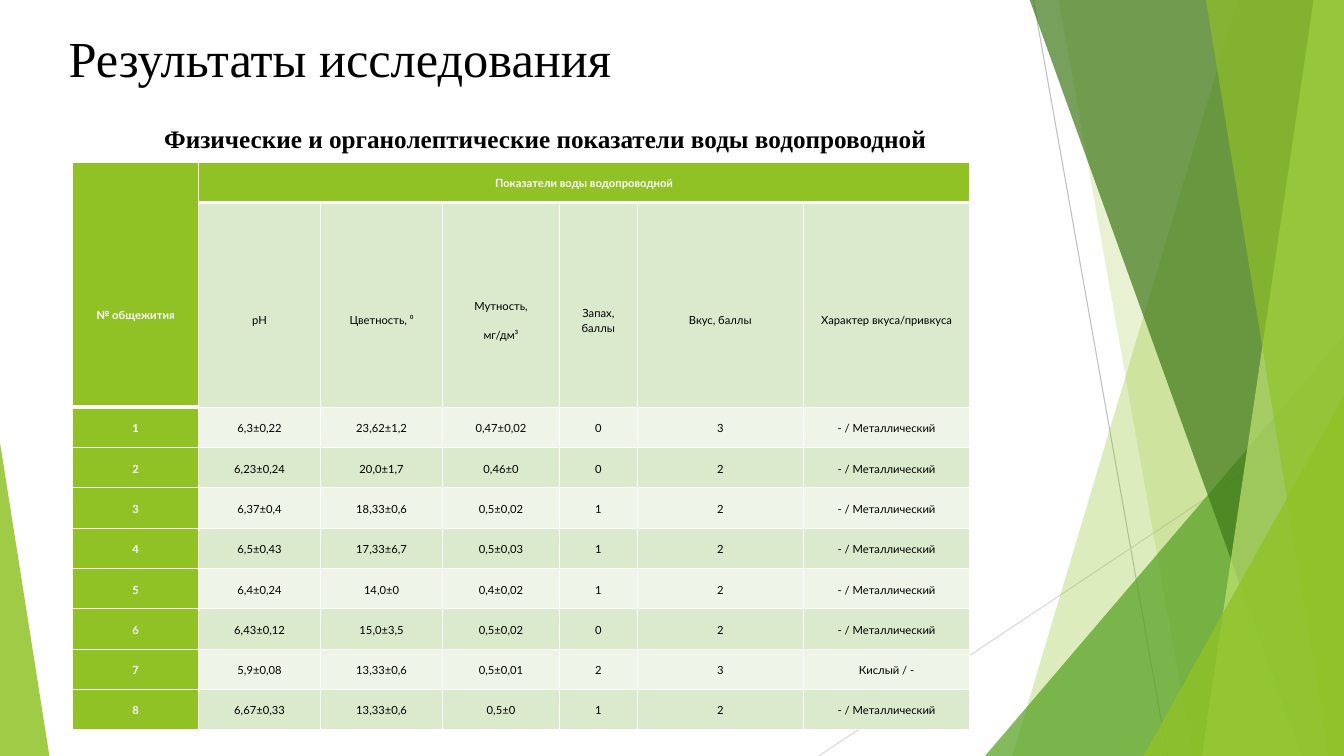
"""Build the slide with the table of tap water indicators by dormitory."""
from lxml import etree
from pptx import Presentation
from pptx.dml.color import RGBColor
from pptx.enum.shapes import MSO_CONNECTOR, MSO_SHAPE
from pptx.enum.text import MSO_ANCHOR, MSO_AUTO_SIZE, PP_ALIGN
from pptx.oxml.ns import qn
from pptx.util import Pt

STRAIGHT, TRIANGLE = MSO_CONNECTOR.STRAIGHT, MSO_SHAPE.ISOSCELES_TRIANGLE
TOP, MIDDLE = MSO_ANCHOR.TOP, MSO_ANCHOR.MIDDLE
LEFT, CENTER = PP_ALIGN.LEFT, PP_ALIGN.CENTER
NO_AUTOFIT = MSO_AUTO_SIZE.NONE

EMU_PER_PX = 9144
WIDTH, HEIGHT = 1333, 750
GREEN, WHITE, BLACK = "90C226", "FFFFFF", "000000"
BANDS = ("EEF4E8", "DBE9CD")
SERIF, SANS = "Times New Roman", "Lato"

TITLE = "Результаты исследования"
TITLE_BOX = (58, 22, 940, 144)
SUBTITLE = "Физические и органолептические показатели воды водопроводной"
SUBTITLE_BOX = (153, 117, 873, 71)

METALLIC = "- / Металлический"
ROWS = [
    ("№ общежития", "Показатели воды водопроводной", "", "", "", "", ""),
    ("", "рН", "Цветность, ⁰", "Мутность,\nмг/дм³", "Запах, баллы",
     "Вкус, баллы", "Характер вкуса/привкуса"),
    ("1", "6,3±0,22", "23,62±1,2", "0,47±0,02", "0", "3", METALLIC),
    ("2", "6,23±0,24", "20,0±1,7", "0,46±0", "0", "2", METALLIC),
    ("3", "6,37±0,4", "18,33±0,6", "0,5±0,02", "1", "2", METALLIC),
    ("4", "6,5±0,43", "17,33±6,7", "0,5±0,03", "1", "2", METALLIC),
    ("5", "6,4±0,24", "14,0±0", "0,4±0,02", "1", "2", METALLIC),
    ("6", "6,43±0,12", "15,0±3,5", "0,5±0,02", "0", "2", METALLIC),
    ("7", "5,9±0,08", "13,33±0,6", "0,5±0,01", "2", "3", "Кислый / -"),
    ("8", "6,67±0,33", "13,33±0,6", "0,5±0", "1", "2", METALLIC),
]
TABLE_LEFT, TABLE_TOP = 72, 161
COLUMN_WIDTHS = (125, 121, 121, 116, 77, 165, 165)
ROW_HEIGHTS = (40, 203) + (40,) * 8
SIDE_INSET, HEADING_DROP = 5, 29

RAYS = [
    ((1025, 0), (1158, 750), "BFBFBF"),
    ((1333, 403), (812, 750), "D9D9D9"),
]
# Each facet is (top-left x, bottom-left x, colour, opacity %) or (box, apex, colour, opacity %).
FACETS = [
    (1228, 1004, GREEN, 30),
    (1050, 1183, GREEN, 20),
    ((977, 333, 356, 417), 1, "54A021", 72),
    (1021, 1291, "3F7819", 70),
    (1303, 1192, "C0E474", 70),
    (1196, 1318, GREEN, 65),
    ((1134, 393, 199, 357), 1, GREEN, 80),
    ((0, 439, 49, 311), 0, GREEN, 85),
]


def px(*lengths):
    return [length * EMU_PER_PX for length in lengths]


def color(hex_code):
    return RGBColor.from_string(hex_code)


def format_text(frame, font_name, size, hex_code, bold, align):
    for paragraph in frame.paragraphs:
        paragraph.alignment = align
        for run in paragraph.runs:
            run.font.name = font_name
            run.font.size = Pt(size)
            run.font.bold = bold
            run.font.color.rgb = color(hex_code)


def add_ray(shapes, start, end, hex_code):
    ray = shapes.add_connector(STRAIGHT, *px(*start, *end))
    ray.line.color.rgb = color(hex_code)
    ray.line.width = Pt(0.75)
    etree.SubElement(ray.element.spPr, qn("a:effectLst"))


def add_facet(shapes, outline, lower, hex_code, opacity):
    if isinstance(outline, tuple):
        facet = shapes.add_shape(TRIANGLE, *px(*outline))
        facet.adjustments[0] = lower
    else:
        builder = shapes.build_freeform(outline, -1, scale=EMU_PER_PX)
        builder.add_line_segments([(WIDTH, -1), (WIDTH, HEIGHT), (lower, HEIGHT)])
        facet = builder.convert_to_shape()
    facet.shadow.inherit = False
    facet.line.fill.background()
    facet.fill.solid()
    facet.fill.fore_color.rgb = color(hex_code)
    tint = facet.element.spPr.find(qn("a:solidFill"))[0]
    etree.SubElement(tint, qn("a:alpha"), val=str(opacity * 1000))


def add_border(cell, side, points):
    border = etree.SubElement(cell._tc.get_or_add_tcPr(), qn("a:ln" + side), w=str(Pt(points)))
    fill = etree.SubElement(border, qn("a:solidFill"))
    etree.SubElement(fill, qn("a:srgbClr"), val=WHITE)


def fill_cell(cell, text, row, column):
    heading_end = 1 if column == 0 else 0
    is_heading = row == 0 or column == 0
    for side, thick in (("L", False), ("R", False),
                        ("T", row == heading_end + 1), ("B", row <= heading_end)):
        add_border(cell, side, 3 if thick else 1)
    cell.fill.solid()
    cell.fill.fore_color.rgb = color(GREEN if is_heading else BANDS[row % 2])
    drop = 2 * HEADING_DROP if row == column == 0 else HEADING_DROP if row == 1 else 0
    cell.margin_left, cell.margin_right, cell.margin_top, cell.margin_bottom = px(
        SIDE_INSET, SIDE_INSET, drop, 0)
    cell.vertical_anchor = MIDDLE
    if text:
        cell.text_frame.text = text
        format_text(cell.text_frame, SANS, 8, WHITE if is_heading else BLACK, is_heading, CENTER)
        for paragraph in cell.text_frame.paragraphs:
            paragraph.line_spacing = 1.15
            paragraph.space_after = Pt(10)


def add_indicators(shapes):
    box = px(TABLE_LEFT, TABLE_TOP, sum(COLUMN_WIDTHS), sum(ROW_HEIGHTS))
    indicators = shapes.add_table(len(ROWS), len(COLUMN_WIDTHS), *box).table
    indicators.first_row = indicators.horz_banding = False
    for column, width in zip(indicators.columns, px(*COLUMN_WIDTHS)):
        column.width = width
    for row, height in zip(indicators.rows, px(*ROW_HEIGHTS)):
        row.height = height
    indicators.cell(0, 0).merge(indicators.cell(1, 0))
    indicators.cell(0, 1).merge(indicators.cell(0, len(COLUMN_WIDTHS) - 1))
    for row, values in enumerate(ROWS):
        for column, text in enumerate(values):
            fill_cell(indicators.cell(row, column), text, row, column)


def main():
    deck = Presentation()
    deck.slide_width, deck.slide_height = px(WIDTH, HEIGHT)
    slide = deck.slides.add_slide(deck.slide_layouts[5])
    shapes = slide.shapes
    for ray in RAYS:
        add_ray(shapes, *ray)
    for facet in FACETS:
        add_facet(shapes, *facet)

    title = shapes.title
    title.element.getparent().append(title.element)
    title.left, title.top, title.width, title.height = px(*TITLE_BOX)
    title.text_frame.text = TITLE
    title.text_frame.vertical_anchor = TOP
    title.text_frame.auto_size = NO_AUTOFIT
    format_text(title.text_frame, SERIF, 36, BLACK, False, LEFT)

    add_indicators(shapes)

    subtitle = shapes.add_textbox(*px(*SUBTITLE_BOX)).text_frame
    subtitle.word_wrap = True
    subtitle.text = SUBTITLE
    format_text(subtitle, SERIF, 18, BLACK, True, LEFT)
    deck.save("out.pptx")


if __name__ == "__main__":
    main()
